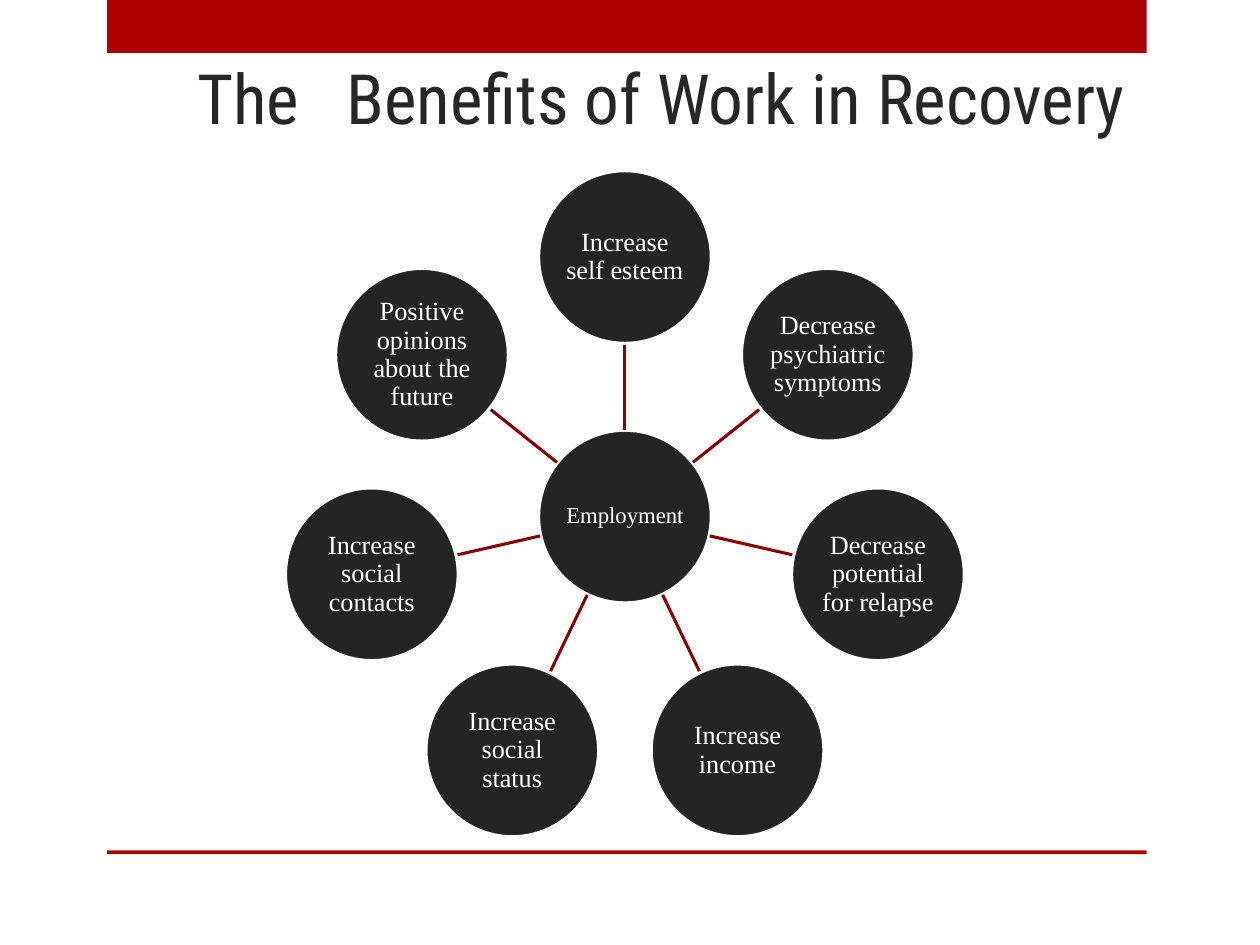
from dataclasses import dataclass
from math import cos, pi, sin

from lxml import etree
from pptx import Presentation
from pptx.dml.color import RGBColor
from pptx.enum.shapes import MSO_CONNECTOR, MSO_SHAPE
from pptx.enum.text import MSO_ANCHOR, PP_ALIGN
from pptx.oxml.ns import qn
from pptx.slide import Slide
from pptx.util import Inches, Pt

RECTANGLE = MSO_SHAPE.RECTANGLE
OVAL = MSO_SHAPE.OVAL
STRAIGHT = MSO_CONNECTOR.STRAIGHT
CENTER = PP_ALIGN.CENTER
TOP = MSO_ANCHOR.TOP
MIDDLE = MSO_ANCHOR.MIDDLE

RED = RGBColor(0xAD, 0x01, 0x01)
DARK_RED = RGBColor(0x8B, 0x01, 0x01)
CHARCOAL = RGBColor(0x24, 0x24, 0x24)
TITLE_GRAY = RGBColor(0x26, 0x26, 0x26)
WHITE = RGBColor(0xFF, 0xFF, 0xFF)

HUB_X, HUB_Y = 4.96, 4.1
ORBIT = 2.06
DIAMETER = 1.37
SPOKE_START, SPOKE_END = 0.69, 1.37
LINE_WIDTH = Pt(1.75)


@dataclass(frozen=True)
class Bar:
    top: float
    height: float


@dataclass(frozen=True)
class Node:
    label: str
    x: float
    y: float
    font_size: float


BARS = [Bar(0, 0.42), Bar(6.75, 0.03)]
BENEFITS = [
    "Increase self esteem",
    "Decrease psychiatric symptoms",
    "Decrease potential for relapse",
    "Increase income",
    "Increase social status",
    "Increase social contacts",
    "Positive opinions about the future",
]


def polar_point(angle: float, radius: float) -> tuple[float, float]:
    return HUB_X + radius * sin(angle), HUB_Y - radius * cos(angle)


def draw_bar(slide: Slide, bar: Bar) -> None:
    shape = slide.shapes.add_shape(
        RECTANGLE, Inches(0.85), Inches(bar.top), Inches(8.25), Inches(bar.height)
    )
    shape.shadow.inherit = False
    shape.fill.solid()
    shape.fill.fore_color.rgb = RED
    shape.line.fill.background()


def draw_title(slide: Slide, text: str) -> None:
    box = slide.shapes.add_textbox(Inches(0.5), Inches(0.44), Inches(9.5), Inches(1))
    frame = box.text_frame
    frame.word_wrap = True
    frame.vertical_anchor = TOP
    frame.margin_top = frame.margin_bottom = 0
    paragraph = frame.paragraphs[0]
    paragraph.text = text
    paragraph.alignment = CENTER
    paragraph.font.name = "Roboto Condensed"
    paragraph.font.size = Pt(39.6)
    paragraph.font.color.rgb = TITLE_GRAY


def draw_spoke(slide: Slide, angle: float) -> None:
    start_x, start_y = polar_point(angle, SPOKE_START)
    end_x, end_y = polar_point(angle, SPOKE_END)
    connector = slide.shapes.add_connector(
        STRAIGHT, Inches(start_x), Inches(start_y), Inches(end_x), Inches(end_y)
    )
    connector.line.color.rgb = DARK_RED
    connector.line.width = LINE_WIDTH
    etree.SubElement(connector._element.spPr, qn("a:effectLst"))


def draw_node(slide: Slide, node: Node) -> None:
    shape = slide.shapes.add_shape(
        OVAL,
        Inches(node.x - DIAMETER / 2),
        Inches(node.y - DIAMETER / 2),
        Inches(DIAMETER),
        Inches(DIAMETER),
    )
    shape.shadow.inherit = False
    shape.fill.solid()
    shape.fill.fore_color.rgb = CHARCOAL
    shape.line.color.rgb = WHITE
    shape.line.width = LINE_WIDTH
    frame = shape.text_frame
    frame.word_wrap = True
    frame.vertical_anchor = MIDDLE
    frame.margin_left = frame.margin_right = Inches(0.01)
    frame.margin_top = frame.margin_bottom = Inches(0.01)
    paragraph = frame.paragraphs[0]
    paragraph.text = node.label
    paragraph.alignment = CENTER
    paragraph.line_spacing = 0.9
    paragraph.font.name = "Times New Roman"
    paragraph.font.size = Pt(node.font_size)
    paragraph.font.color.rgb = WHITE


def main() -> None:
    presentation = Presentation()
    presentation.slide_width = Inches(10)
    presentation.slide_height = Inches(7.5)
    slide = presentation.slides.add_slide(presentation.slide_layouts[6])

    for bar in BARS:
        draw_bar(slide, bar)
    draw_title(slide, "The   Benefits of Work in Recovery")
    draw_node(slide, Node("Employment", HUB_X, HUB_Y, 13))
    for index, benefit in enumerate(BENEFITS):
        angle = 2 * pi * index / len(BENEFITS)
        draw_spoke(slide, angle)
        draw_node(slide, Node(benefit, *polar_point(angle, ORBIT), 15))

    presentation.save("out.pptx")


if __name__ == "__main__":
    main()
